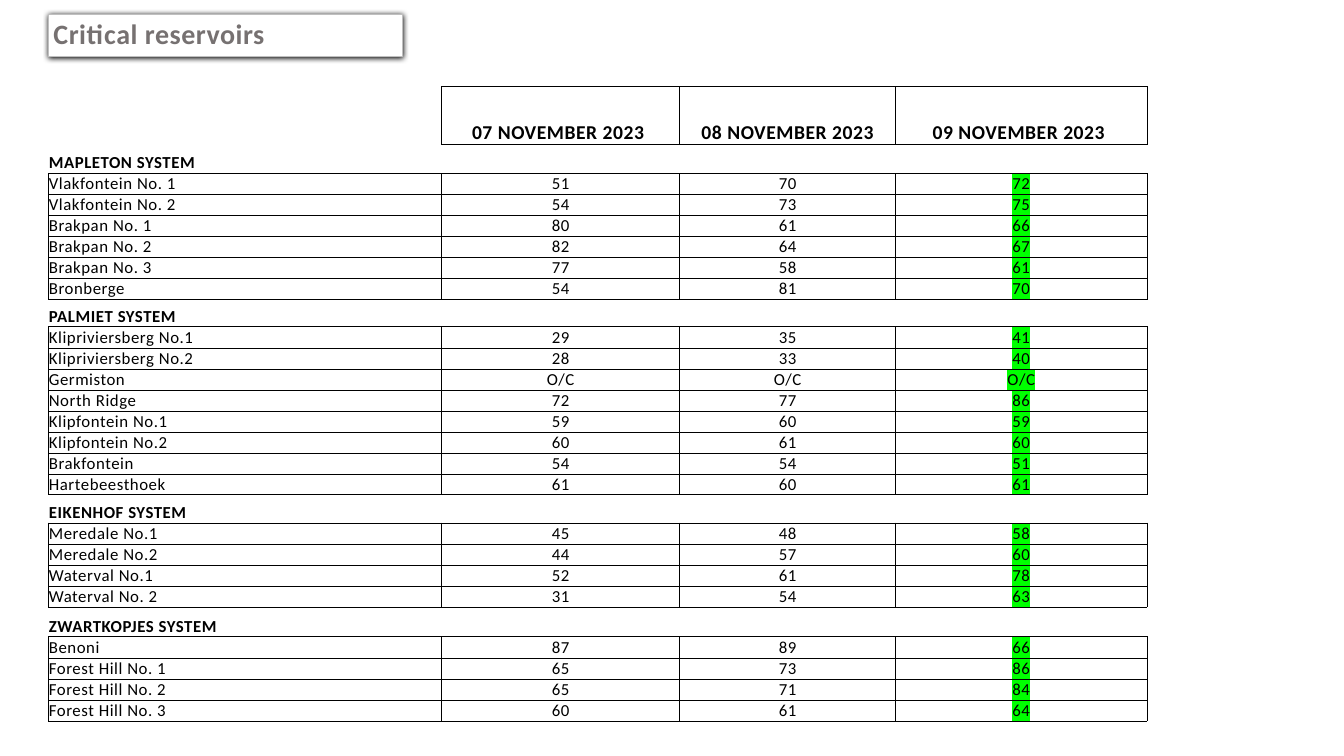
import pptx
import pptx.dml.color
import pptx.enum.text
import pptx.oxml
import pptx.oxml.ns
import pptx.util
from dataclasses import dataclass
from pptx.util import Inches

NS = pptx.oxml.ns.nsdecls("a")


@dataclass(frozen=True)
class Theme:
    font: str = "Calibri"
    title: str = "767171"
    frame: str = "BFBFBF"
    paper: str = "FFFFFF"
    ink: str = "000000"
    highlight: str = "00FF00"
    title_size: int = 40
    header_size: int = 28
    body_size: int = 24
    spacing: int = 80  # hundredths of a point
    thick: float = 1
    thin: float = 0.5


theme = Theme()
rgb = pptx.dml.color.RGBColor.from_string

dates = ["07 NOVEMBER 2023 ", " 08 NOVEMBER 2023 ", "09 NOVEMBER 2023 "]
# system name, height of its heading row, reservoirs with one level per date
systems = [
    ("MAPLETON SYSTEM", 0.57, [
        ("Vlakfontein No. 1", "51", "70", "72"),
        ("Vlakfontein No. 2", "54", "73", "75"),
        ("Brakpan No. 1", "80", "61", "66"),
        ("Brakpan No. 2", "82", "64", "67"),
        ("Brakpan No. 3", "77", "58", "61"),
        ("Bronberge", "54", "81", "70"),
    ]),
    ("PALMIET SYSTEM", 0.54, [
        ("Klipriviersberg No.1", "29", "35", "41"),
        ("Klipriviersberg No.2", "28", "33", "40"),
        ("Germiston", "O/C", "O/C", "O/C"),
        ("North Ridge", "72", "77", "86"),
        ("Klipfontein No.1", "59", "60", "59"),
        ("Klipfontein No.2", "60", "61", "60"),
        ("Brakfontein", "54", "54", "51"),
        ("Hartebeesthoek", "61", "60", "61"),
    ]),
    ("EIKENHOF SYSTEM", 0.56, [
        ("Meredale No.1", "45", "48", "58"),
        ("Meredale No.2", "44", "57", "60"),
        ("Waterval No.1", "52", "61", "78"),
        ("Waterval No. 2", "31", "54", "63"),
    ]),
    ("ZWARTKOPJES SYSTEM", 0.59, [
        ("Benoni", "87", "89", "66"),
        ("Forest Hill No. 1", "65", "73", "86"),
        ("Forest Hill No. 2", "65", "71", "84"),
        ("Forest Hill No. 3", "60", "61", "64"),
    ]),
]


def add_span(para, text, size, color, bold):
    span = para.add_run()
    span.text = text
    span.font.name = theme.font
    span.font.size = pptx.util.Pt(size)
    span.font.bold = bold
    span.font.color.rgb = rgb(color)
    span.font._element.set("spc", str(theme.spacing))
    return span


def fill_cell(cell, text, size, bold, centred, borders, marked=False):
    """Write one cell; borders maps the sides L, R, T, B to widths in points."""
    properties = cell._tc.get_or_add_tcPr()
    for side in "LRTB":
        if side in borders:
            width = int(pptx.util.Pt(borders[side]))
            properties.append(pptx.oxml.parse_xml(
                f'<a:ln{side} {NS} w="{width}"><a:solidFill>'
                f'<a:srgbClr val="{theme.ink}"/></a:solidFill></a:ln{side}>'))
    cell.fill.background()
    if not text:
        return
    cell.vertical_anchor = pptx.enum.text.MSO_ANCHOR.BOTTOM
    cell.margin_left = cell.margin_right = cell.margin_top = Inches(0.01)
    cell.margin_bottom = 0
    para = cell.text_frame.paragraphs[0]
    align = pptx.enum.text.PP_ALIGN
    para.alignment = align.CENTER if centred else align.LEFT
    span = add_span(para, text, size, theme.ink, bold)
    if marked:
        latin = span.font._element.find(pptx.oxml.ns.qn("a:latin"))
        latin.addprevious(pptx.oxml.parse_xml(
            f'<a:highlight {NS}><a:srgbClr val="{theme.highlight}"/></a:highlight>'))


deck = pptx.Presentation()
deck.slide_width, deck.slide_height = Inches(26.67), Inches(15)
page = deck.slides.add_slide(deck.slide_layouts[5])
page.background.fill.solid()
page.background.fill.fore_color.rgb = rgb(theme.paper)

# Title
title = page.shapes.title
title.left, title.top = Inches(0.96), Inches(0.28)
title.width, title.height = Inches(7.02), Inches(0.84)
title.fill.solid()
title.fill.fore_color.rgb = rgb(theme.paper)
title.line.color.rgb = rgb(theme.frame)
title.line.width = pptx.util.Pt(0.75)
title._element.spPr.append(pptx.oxml.parse_xml(
    f'<a:effectLst {NS}><a:outerShdw blurRad="{int(pptx.util.Pt(8.5))}" '
    f'dist="{int(pptx.util.Pt(1))}" dir="5400000" algn="t" rotWithShape="0">'
    f'<a:srgbClr val="{theme.ink}"/></a:outerShdw></a:effectLst>'))
frame = title.text_frame
frame.auto_size = pptx.enum.text.MSO_AUTO_SIZE.NONE
frame.vertical_anchor = pptx.enum.text.MSO_ANCHOR.MIDDLE
heading = frame.paragraphs[0]
heading.alignment = pptx.enum.text.PP_ALIGN.LEFT
heading.line_spacing = 0.9
add_span(heading, "Critical reservoirs", theme.title_size, theme.title, True)

# Table
row_count = 1 + sum(1 + len(reservoirs) for _, _, reservoirs in systems)
table = page.shapes.add_table(row_count, 4, Inches(0.96), Inches(1.72),
                              Inches(21.8), Inches(12.39)).table
table.first_row = table.horz_banding = False
style = table._tbl.tblPr.find(pptx.oxml.ns.qn("a:tableStyleId"))
style.text = "{2D5ABB26-0587-4C30-8999-92F81FD0307C}"  # no style, no grid
for column, width in zip(table.columns, (7.8, 4.73, 4.28, 4.99)):
    column.width = Inches(width)

table.rows[0].height = Inches(1.15)
fill_cell(table.cell(0, 0), "", theme.header_size, True, False, {"R": theme.thick})
for col, date in enumerate(dates, 1):
    fill_cell(table.cell(0, col), date, theme.header_size, True, True,
              dict.fromkeys("LRTB", theme.thick))

row = 1
for name, height, reservoirs in systems:
    table.rows[row].height = Inches(height)
    for col, text in enumerate((name, "", "", "")):
        sides = "B" if (row, col) == (1, 0) else "TB"
        fill_cell(table.cell(row, col), text, theme.body_size, True, False,
                  dict.fromkeys(sides, theme.thick))
    row += 1
    for index, reservoir in enumerate(reservoirs):
        last = index == len(reservoirs) - 1
        table.rows[row].height = Inches(0.4 if last else 0.39)
        borders = {"L": theme.thick, "R": theme.thick,
                   "T": theme.thin if index else theme.thick,
                   "B": theme.thick if last else theme.thin}
        for col, text in enumerate(reservoir):
            fill_cell(table.cell(row, col), text, theme.body_size, False, col > 0,
                      borders, marked=col == 3)
        row += 1

deck.save("out.pptx")
